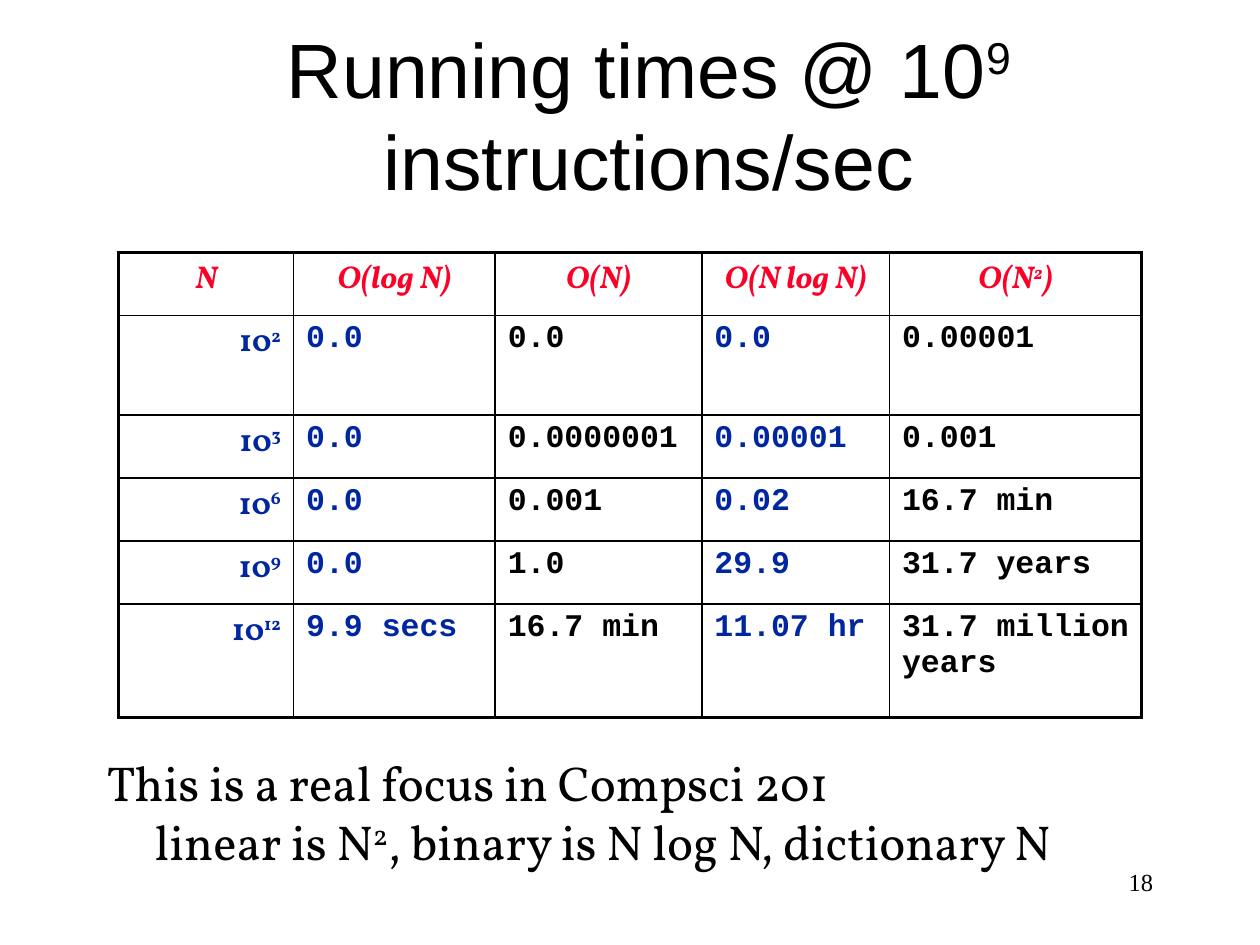
from dataclasses import dataclass

from lxml.etree import SubElement
from pptx import Presentation
from pptx.dml.color import RGBColor as Color
from pptx.enum.text import MSO_ANCHOR as Anchor, PP_ALIGN as Align
from pptx.oxml.ns import qn
from pptx.util import Inches, Pt


@dataclass(frozen=True)
class Style:
    font: str
    size: int
    color: str = "000000"
    bold: bool = False
    italic: bool = False


@dataclass(frozen=True)
class Theme:
    title: Style = Style("Arial", 44)
    body: Style = Style("Vollkorn", 28)
    number: Style = Style("Times New Roman", 14)
    header: Style = Style("Vollkorn", 18, "FC0128", True, True)
    power: Style = Style("Vollkorn", 18, "00279F", True)
    blue_time: Style = Style("Courier New", 18, "00279F", True)
    black_time: Style = Style("Courier New", 18, "000000", True)
    rule: str = "000000"
    outer_rule: float = 2.25
    inner_rule: float = 1


@dataclass(frozen=True)
class Area:
    """A rectangle given as shares of the slide's width and height."""
    left: float
    top: float
    width: float
    height: float

    def lengths(self) -> tuple:
        return (int(WIDTH * self.left), int(HEIGHT * self.top),
                int(WIDTH * self.width), int(HEIGHT * self.height))


THEME = Theme()
WIDTH, HEIGHT = Inches(10), Inches(7.5)
COLUMNS = (1.39, 1.6, 1.64, 1.49, 2)
ROWS = (0.5, 0.79, 0.5, 0.5, 0.5, 0.9)

# Text between carets is raised
TIMES = (
    ("N", "O(log N)", "O(N)", "O(N log N)", "O(N^2^)"),
    ("10^2^", "0.0", "0.0", "0.0", "0.00001"),
    ("10^3^", "0.0", "0.0000001", "0.00001", "0.001"),
    ("10^6^", "0.0", "0.001", "0.02", "16.7 min"),
    ("10^9^", "0.0", "1.0", "29.9", "31.7 years"),
    ("10^12^", "9.9 secs", "16.7 min", "11.07 hr", "31.7 million years"),
)
COLUMN_STYLES = (THEME.power, THEME.blue_time, THEME.black_time,
                 THEME.blue_time, THEME.black_time)


def write(para, text: str, style: Style, align=Align.LEFT) -> None:
    para.alignment = align
    for index, part in enumerate(text.split("^")):
        if not part:
            continue
        span = para.add_run()
        span.text = part
        font = span.font
        font.name, font.size = style.font, Pt(style.size)
        font.bold, font.italic = style.bold, style.italic
        font.color.rgb = Color.from_string(style.color)
        if index % 2:
            span._r.get_or_add_rPr().set("baseline", "30000")


def add_text(page, area: Area, lines: tuple, style: Style,
             align=Align.LEFT, anchor=Anchor.TOP, indent: float = 0) -> None:
    frame = page.shapes.add_textbox(*area.lengths()).text_frame
    frame.word_wrap = True
    frame.vertical_anchor = anchor
    for level, line in enumerate(lines):
        para = frame.add_paragraph() if level else frame.paragraphs[0]
        write(para, line, style, align)
        if level:
            para._p.get_or_add_pPr().set("marL", str(Inches(indent * level)))


def set_borders(cell, row: int, column: int) -> None:
    outer = {"lnL": column == 0, "lnR": column == len(COLUMNS) - 1,
             "lnT": row == 0, "lnB": row == len(ROWS) - 1}
    properties = cell._tc.get_or_add_tcPr()
    for position, (side, is_outer) in enumerate(outer.items()):
        width = THEME.outer_rule if is_outer else THEME.inner_rule
        line = SubElement(properties, qn(f"a:{side}"), w=str(Pt(width)))
        fill = SubElement(line, qn("a:solidFill"))
        SubElement(fill, qn("a:srgbClr"), val=THEME.rule)
        properties.insert(position, line)


def add_times_table(page, left: float, top: float) -> None:
    table = page.shapes.add_table(
        len(ROWS), len(COLUMNS), int(WIDTH * left), int(HEIGHT * top),
        Inches(sum(COLUMNS)), Inches(sum(ROWS))).table
    table.first_row = table.horz_banding = False
    for column, width in zip(table.columns, COLUMNS):
        column.width = Inches(width)
    for row, height in zip(table.rows, ROWS):
        row.height = Inches(height)
    for r, texts in enumerate(TIMES):
        for c, text in enumerate(texts):
            cell = table.cell(r, c)
            cell.fill.background()
            set_borders(cell, r, c)
            style = COLUMN_STYLES[c] if r else THEME.header
            align = (Align.CENTER if r == 0
                     else Align.RIGHT if c == 0 else Align.LEFT)
            write(cell.text_frame.paragraphs[0], text, style, align)


def main() -> None:
    deck = Presentation()
    deck.slide_width, deck.slide_height = WIDTH, HEIGHT
    page = deck.slides.add_slide(deck.slide_layouts[6])

    # Title
    add_text(page, Area(0.09, 0.01, 0.85, 0.22),
             ("Running times @ 10^9^ instructions/sec",),
             THEME.title, Align.CENTER, Anchor.MIDDLE)

    # Running times by input size
    add_times_table(page, 0.094, 0.267)

    # Takeaway
    add_text(page, Area(0.075, 0.79, 0.85, 0.16),
             ("This is a real focus in Compsci 201",
              "linear is N^2^, binary is N log N, dictionary N"),
             THEME.body, indent=0.38)

    # Slide number
    add_text(page, Area(0.717, 0.911, 0.208, 0.067), ("18",),
             THEME.number, Align.RIGHT)

    deck.save("out.pptx")


if __name__ == "__main__":
    main()
